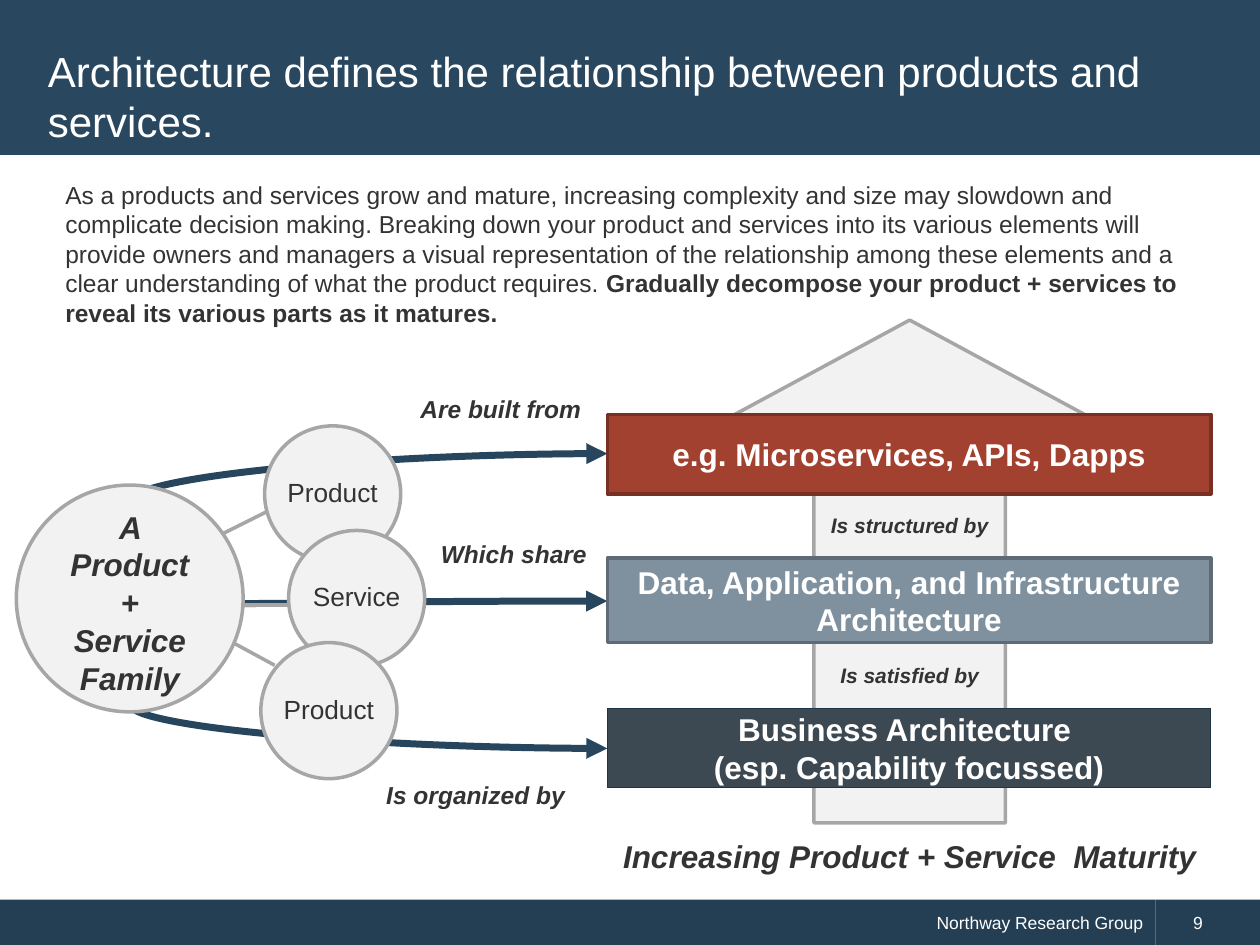
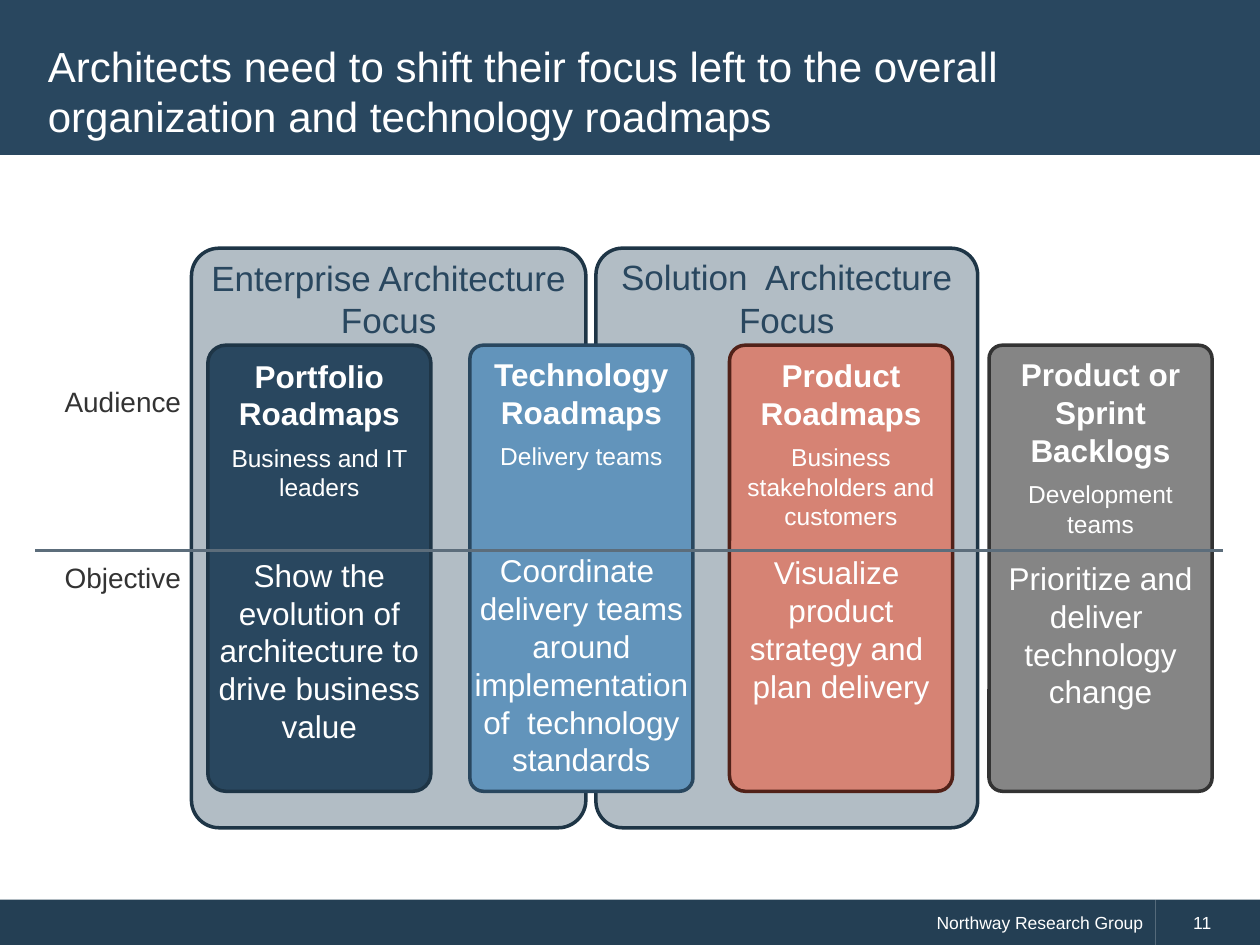
from lxml import etree
from pptx import Presentation
from pptx.dml.color import RGBColor
from pptx.enum import shapes, text
from pptx.oxml.ns import qn
from pptx.util import Inches, Pt

WHITE = RGBColor(0xFF, 0xFF, 0xFF)
INK = RGBColor(0x33, 0x33, 0x33)
NAVY = RGBColor(0x29, 0x47, 0x5F)
DARK_NAVY = RGBColor(0x1E, 0x35, 0x46)
FOOTER_NAVY = RGBColor(0x24, 0x3F, 0x54)
ARROW_NAVY = RGBColor(0x27, 0x46, 0x5E)
PALE = RGBColor(0xF2, 0xF2, 0xF2)
SILVER = RGBColor(0xA6, 0xA6, 0xA6)
BRICK = RGBColor(0xA2, 0x41, 0x30)
DARK_BRICK = RGBColor(0x78, 0x30, 0x24)
STEEL = RGBColor(0x7F, 0x91, 0x9F)
DARK_STEEL = RGBColor(0x5E, 0x6B, 0x76)
SLATE = RGBColor(0x3D, 0x49, 0x52)
PANEL = RGBColor(0xB2, 0xBD, 0xC5)
SALMON = RGBColor(0xD6, 0x83, 0x74)
MAROON = RGBColor(0x51, 0x21, 0x18)
BLUE = RGBColor(0x62, 0x94, 0xBB)
GRAY = RGBColor(0x85, 0x85, 0x85)
RULE = RGBColor(0x5C, 0x6D, 0x7B)

FONT = "Arial"
FOOTER = "Northway Research Group"
LEFT, CENTER, RIGHT = text.PP_ALIGN.LEFT, text.PP_ALIGN.CENTER, text.PP_ALIGN.RIGHT
TOP, MIDDLE = text.MSO_ANCHOR.TOP, text.MSO_ANCHOR.MIDDLE
RECT = shapes.MSO_SHAPE.RECTANGLE
ROUNDED = shapes.MSO_SHAPE.ROUNDED_RECTANGLE
OVAL = shapes.MSO_SHAPE.OVAL
STRAIGHT, CURVE = shapes.MSO_CONNECTOR.STRAIGHT, shapes.MSO_CONNECTOR.CURVE
DEFAULT_INSETS = (0.1, 0.05, 0.1, 0.05)


def apply(target, values):
    for name, value in values.items():
        setattr(target, name, value)


class Deck:
    """Holds the shared style and the slide being built."""

    def __init__(self):
        self.deck = Presentation()
        apply(self.deck, {"slide_width": Inches(10), "slide_height": Inches(7.5)})
        self.page = None

    def start_page(self, title, number, title_top):
        self.page = self.deck.slides.add_slide(self.deck.slide_layouts[5])
        heading = self.page.shapes.title
        bands = [
            self.shape(RECT, (0, 0, 10, 1.23), NAVY),
            self.shape(RECT, (0, 7.14, 9.17, 0.36), FOOTER_NAVY),
            self.shape(RECT, (9.17, 7.14, 0.83, 0.36), FOOTER_NAVY),
        ]
        for band in bands:
            heading.element.addprevious(band.element)
        self.set_text(bands[1], [self.para(FOOTER, 10, WHITE, align=RIGHT)])
        self.set_text(bands[2], [self.para(str(number), 10, WHITE, align=LEFT)],
                      insets=(0.3, 0.05, 0, 0.05))
        self.place(heading, (0.28, title_top, 9.43, 0.96))
        self.set_text(heading, [self.para(title, 24, WHITE, align=LEFT)])

    @staticmethod
    def place(box, area):
        apply(box, dict(zip(("left", "top", "width", "height"), map(Inches, area))))

    @staticmethod
    def para(content, size, color, align=CENTER, spacing=None, **font):
        """Describe a paragraph; content is a string or (string, bold) pairs."""
        spans = [(content, font.get("bold", False))] if isinstance(content, str) else content
        return {
            "spans": spans,
            "color": color,
            "format": {"alignment": align, **(spacing or {})},
            "font": {"name": FONT, "size": Pt(size), **font},
        }

    def set_text(self, box, paras, anchor=MIDDLE, insets=DEFAULT_INSETS, wrap=True):
        frame = box.text_frame
        sides = ("margin_left", "margin_top", "margin_right", "margin_bottom")
        apply(frame, {"word_wrap": wrap, "auto_size": text.MSO_AUTO_SIZE.NONE,
                      "vertical_anchor": anchor, **dict(zip(sides, map(Inches, insets)))})
        for index, wanted in enumerate(paras):
            para = frame.add_paragraph() if index else frame.paragraphs[0]
            apply(para, wanted["format"])
            for content, bold in wanted["spans"]:
                span = para.add_run()
                span.text = content
                apply(span.font, {**wanted["font"], "bold": bold})
                span.font.color.rgb = wanted["color"]

    def shape(self, kind, area, fill, border=None, weight=2.0, adjust=()):
        box = self.page.shapes.add_shape(kind, *map(Inches, area))
        box.shadow.inherit = False
        box.fill.solid()
        box.fill.fore_color.rgb = fill
        if border is None:
            box.line.fill.background()
        else:
            box.line.color.rgb = border
            box.line.width = Pt(weight)
        for index, value in enumerate(adjust):
            box.adjustments[index] = value
        return box

    def label(self, area, content, size, anchor=TOP, align=CENTER, **font):
        box = self.page.shapes.add_textbox(*map(Inches, area))
        self.set_text(box, [self.para(content, size, INK, align=align, **font)], anchor)
        return box

    def line(self, start, end, color, weight, kind=STRAIGHT):
        link = self.page.shapes.add_connector(kind, *map(Inches, (*start, *end)))
        link.line.color.rgb = color
        link.line.width = Pt(weight)
        etree.SubElement(link.element.spPr, qn("a:effectLst"))
        return link

    def curved_arrow(self, tip, tail, preset):
        """Curve that leaves the tip horizontally, with the arrowhead at the tip."""
        link = self.line(tip, tail, ARROW_NAVY, 4, CURVE)
        link.element.spPr.find(qn("a:prstGeom")).set("prst", preset)
        outline = link.element.spPr.find(qn("a:ln"))
        etree.SubElement(outline, qn("a:headEnd"), type="triangle")


def build_relationships(deck):
    deck.start_page("Architecture defines the relationship between products and services.",
                    9, 0.28)
    for tip, tail, preset in [
        ((4.82, 5.94), (1.03, 5.59), "curvedConnector2"),
        ((4.82, 4.77), (1.61, 4.79), "curvedConnector3"),
        ((4.82, 3.6), (1.03, 3.98), "curvedConnector2"),
    ]:
        deck.curved_arrow(tip, tail, preset)

    for start, end in [((1.7, 5.02), (2.18, 5.28)), ((1.66, 4.8), (2.29, 4.8)),
                       ((1.66, 4.29), (2.16, 4.04))]:
        deck.line(start, end, SILVER, 2)

    deck.shape(OVAL, (0.13, 3.85, 1.8, 1.8), PALE, SILVER)
    for left, top, name in [(2.1, 3.38, "Product"), (2.29, 4.21, "Service"),
                            (2.07, 5.1, "Product")]:
        member = deck.shape(OVAL, (left, top, 1.08, 1.08), PALE, SILVER)
        deck.set_text(member, [deck.para(name, 15, INK, spacing={"line_spacing": 0.9})],
                      insets=(0, 0, 0, 0), wrap=False)

    deck.shape(shapes.MSO_SHAPE.UP_ARROW, (5.7, 2.54, 3.04, 3.99), PALE, SILVER,
               adjust=(0.5, 0.27))
    for top, height, fill, border, weight, lines in [
        (3.29, 0.63, BRICK, DARK_BRICK, 2, ["e.g. Microservices, APIs, Dapps"]),
        (4.43, 0.67, STEEL, DARK_STEEL, 2,
         ["Data, Application, and Infrastructure Architecture"]),
        (5.62, 0.63, SLATE, DARK_NAVY, 0.5,
         ["Business Architecture ", "(esp. Capability focussed)"]),
    ]:
        layer = deck.shape(RECT, (4.82, top, 4.79, height), fill, border, weight)
        deck.set_text(layer, [deck.para(line, 18, WHITE, bold=True) for line in lines])

    for area, content, size, align in [
        ((2.67, 3.08, 2.61, 0.34), "Are built from", 14, CENTER),
        ((3.4, 4.23, 2.05, 0.34), "Which share", 14, LEFT),
        ((2.8, 6.14, 1.95, 0.34), "Is organized by", 14, CENTER),
        ((6.18, 4.02, 2.08, 0.3), "Is structured by", 12, CENTER),
        ((6.26, 5.21, 1.92, 0.3), "Is satisfied by", 12, CENTER),
        ((4.38, 6.59, 5.68, 0.4), "Increasing Product + Service  Maturity", 18, CENTER),
        ((0.44, 3.98, 1.18, 1.62), "A Product + Service Family", 18, CENTER),
    ]:
        deck.label(area, content, size, align=align, bold=True, italic=True)

    deck.label((0.42, 1.38, 9.16, 1.28), [
        ("As a products and services grow and mature, increasing complexity and size may "
         "slowdown and complicate decision making. Breaking down your product and services "
         "into its various elements will provide owners and managers a visual representation "
         "of the relationship among these elements and a clear understanding of what the "
         "product requires. ", False),
        ("Gradually decompose your product + services to reveal its various parts as it "
         "matures.", True),
    ], 14, align=LEFT)


def build_roadmaps(deck):
    deck.start_page("Architects need to shift their focus left to the overall organization "
                    "and technology roadmaps", 11, 0.24)
    for left, width, name in [(4.73, 3.03, "Solution  Architecture Focus"),
                              (1.52, 3.13, "Enterprise Architecture Focus")]:
        panel = deck.shape(ROUNDED, (left, 1.97, width, 4.6), PANEL, DARK_NAVY, adjust=(0.07,))
        deck.set_text(panel, [deck.para(name, 20, NAVY)], TOP, (0, 0, 0, 0.04))

    # left, fill, border, corner, side inset, name, audience, gap in points, objective
    for left, fill, border, corner, side, name, audience, gap, objective in [
        (1.65, NAVY, DARK_NAVY, 0.08, 0.04, "Portfolio Roadmaps", "Business and IT leaders",
         31, ["Show the evolution of architecture to drive business value"]),
        (5.79, SALMON, MAROON, 0.07, 0, "Product Roadmaps",
         "Business stakeholders and customers", 13,
         ["Visualize ", "product strategy and ", "plan delivery"]),
        (3.73, BLUE, NAVY, 0.06, 0, "Technology Roadmaps", "Delivery teams", 46,
         ["Coordinate ", "delivery teams around implementation of  technology standards"]),
        (7.85, GRAY, INK, 0.06, 0, "Product or Sprint Backlogs", "Development teams", 12,
         ["Prioritize and deliver ", "technology", "change"]),
    ]:
        card = deck.shape(ROUNDED, (left, 2.74, 1.77, 3.54), fill, border, adjust=(corner,))
        paras = [deck.para(name, 18, WHITE, spacing={"space_after": Pt(6)}, bold=True),
                 deck.para(audience, 14, WHITE)]
        for index, line in enumerate(objective):
            before = Pt(0 if index else gap)
            paras.append(deck.para(line, 18, WHITE, spacing={"space_before": before}))
        deck.set_text(card, paras, TOP, (side, 0.05, side, 0.05))

    deck.line((0.28, 4.37), (9.71, 4.37), RULE, 1.5)
    for top, name in [(3, "Audience"), (4.4, "Objective")]:
        deck.label((0.28, top, 1.39, 0.37), name, 16)


def main():
    deck = Deck()
    build_relationships(deck)
    build_roadmaps(deck)
    deck.deck.save("out.pptx")


if __name__ == "__main__":
    main()
